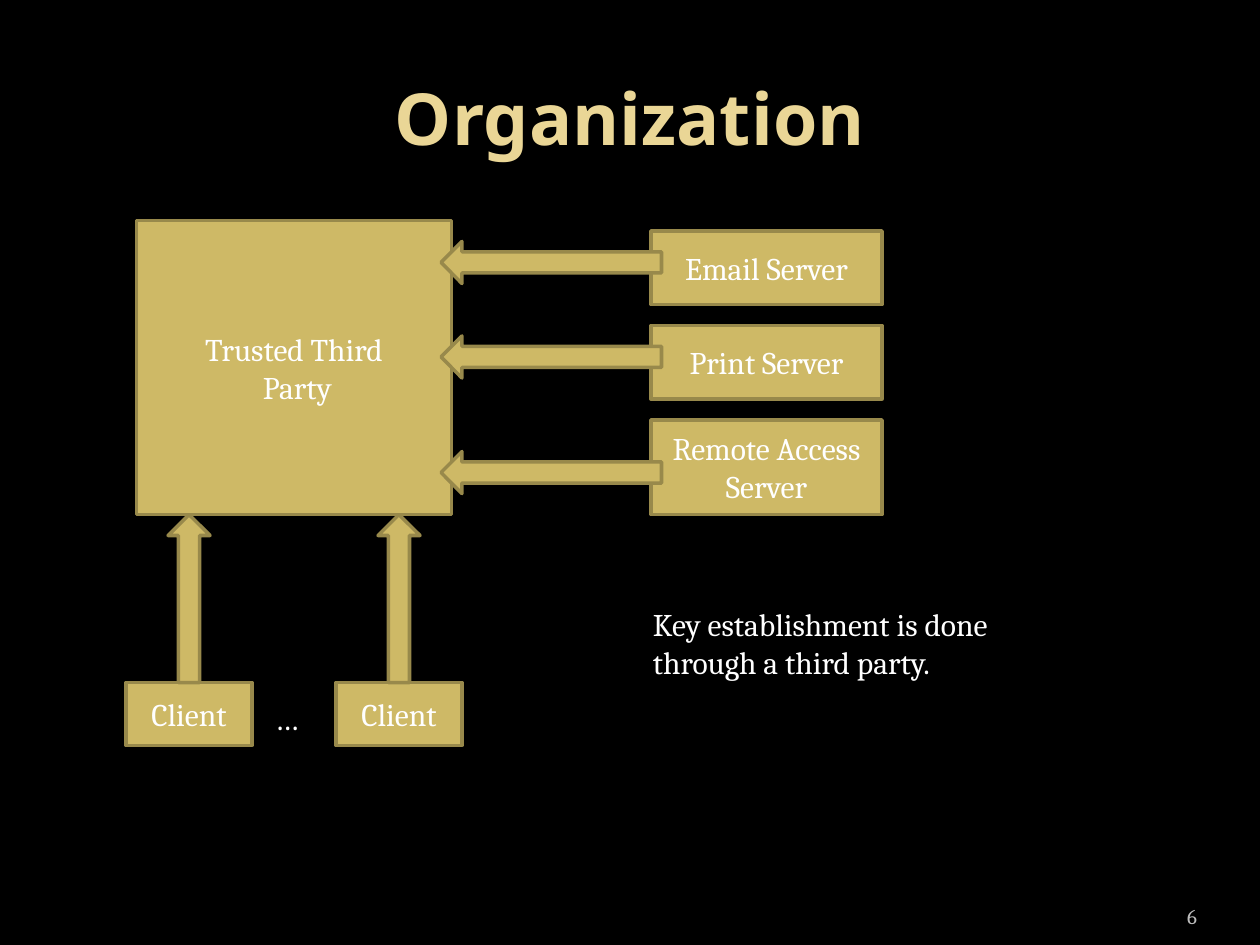
from dataclasses import dataclass

from pptx import Presentation
from pptx.dml.color import RGBColor
from pptx.enum.shapes import MSO_SHAPE
from pptx.enum.text import MSO_ANCHOR, PP_ALIGN
from pptx.util import Pt


@dataclass(frozen=True)
class Theme:
    """Colours, fonts and type sizes of the slide."""
    back: str = "000000"
    title: str = "EAD696"
    fill: str = "CEB966"
    line: str = "98894B"
    text: str = "FFFFFF"
    muted: str = "BDBDBD"
    head: str = "Noto Sans"
    body: str = "Cambria"
    big: float = 41
    base: float = 18
    small: float = 12


THEME = Theme()


def color(code):
    """Turn a hex code into a colour."""
    return RGBColor.from_string(code)


def write(frame, text, align, hue=THEME.text, size=THEME.base,
          face=THEME.body, bold=False):
    """Fill a text frame, one paragraph per line of text."""
    frame.text = text
    for para in frame.paragraphs:
        para.alignment = align
        font = para.font
        font.name, font.size, font.bold = face, Pt(size), bold
        font.color.rgb = color(hue)


def add_title(slide, text):
    """Place and format the title."""
    title = slide.shapes.title
    title.left, title.top = Pt(36), Pt(21.6)
    title.width, title.height = Pt(648), Pt(90)
    title.text_frame.vertical_anchor = MSO_ANCHOR.MIDDLE
    write(title.text_frame, text, PP_ALIGN.CENTER, THEME.title, THEME.big,
          THEME.head, True)


def add_block(slide, kind, x, y, w, h):
    """Draw a gold outlined shape."""
    block = slide.shapes.add_shape(kind, Pt(x), Pt(y), Pt(w), Pt(h))
    block.shadow.inherit = False
    block.fill.solid()
    block.fill.fore_color.rgb = color(THEME.fill)
    block.line.color.rgb = color(THEME.line)
    block.line.width = Pt(2)
    return block


def add_box(slide, text, x, y, w, h):
    """Draw a labelled box."""
    box = add_block(slide, MSO_SHAPE.RECTANGLE, x, y, w, h)
    box.text_frame.vertical_anchor = MSO_ANCHOR.MIDDLE
    write(box.text_frame, text, PP_ALIGN.CENTER)


def add_note(slide, text, x, y, w, h, wrap=True):
    """Add plain text on the background."""
    frame = slide.shapes.add_textbox(Pt(x), Pt(y), Pt(w), Pt(h)).text_frame
    frame.word_wrap = wrap
    write(frame, text, PP_ALIGN.LEFT)


def add_page(slide, text):
    """Add the page number."""
    frame = slide.shapes.add_textbox(Pt(624), Pt(505.5), Pt(60),
                                     Pt(28.8)).text_frame
    frame.word_wrap = True
    frame.margin_left = frame.margin_right = 0
    frame.vertical_anchor = MSO_ANCHOR.BOTTOM
    write(frame, text, PP_ALIGN.RIGHT, THEME.muted, THEME.small)


def main():
    """Build and save the slide."""
    deck = Presentation()
    deck.slide_width, deck.slide_height = Pt(720), Pt(540)
    slide = deck.slides.add_slide(deck.slide_layouts[5])
    slide.background.fill.solid()
    slide.background.fill.fore_color.rgb = color(THEME.back)

    add_title(slide, "Organization")
    add_box(slide, "Trusted Third\n Party", 78, 126, 180, 168)

    servers = [("Email Server", 42, 138), ("Print Server", 42, 192),
               ("Remote Access Server", 54, 258)]
    for row, (name, high, _) in enumerate(servers):
        add_box(slide, name, 372, 132 + 54 * row, 132, high)
    for _, _, top in servers:
        add_block(slide, MSO_SHAPE.LEFT_ARROW, 252, top, 126, 24)

    for left in (72, 192):
        add_box(slide, "Client", left, 390, 72, 36)
        add_block(slide, MSO_SHAPE.UP_ARROW, left + 24, 294, 24, 96)

    add_note(slide, "…", 150, 396, 32.4, 29, wrap=False)
    add_note(slide, "Key establishment is done through a third party.",
             366, 342, 264, 51)
    add_page(slide, "6")
    deck.save("out.pptx")


if __name__ == "__main__":
    main()
